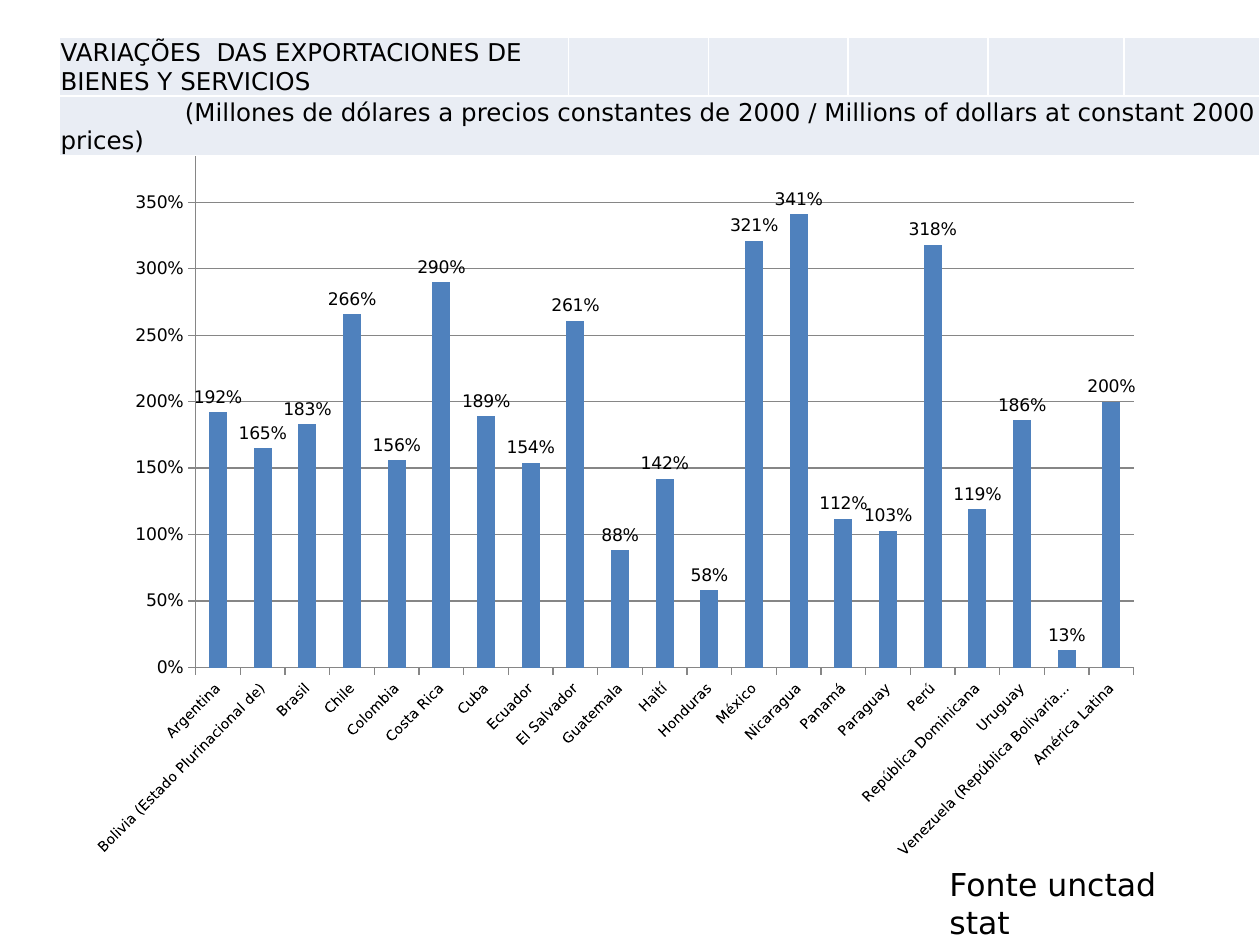
from lxml.etree import SubElement
from pptx import Presentation
from pptx.chart.data import CategoryChartData
from pptx.dml.color import RGBColor
from pptx.enum.chart import XL_CHART_TYPE, XL_LABEL_POSITION, XL_TICK_MARK
from pptx.enum.text import MSO_ANCHOR
from pptx.oxml import parse_xml
from pptx.oxml.ns import nsdecls, qn
from pptx.util import Pt

FONT = "DejaVu Sans"
BLACK = RGBColor(0x00, 0x00, 0x00)
GRAY = RGBColor(0x86, 0x86, 0x86)
BLUE = RGBColor(0x4F, 0x81, 0xBD)
PALE = RGBColor(0xE9, 0xED, 0xF4)

HEADINGS = [
    ("VARIAÇÕES  DAS EXPORTACIONES DE BIENES Y SERVICIOS", 2, 0),
    ("(Millones de dólares a precios constantes de 2000 / "
     "Millions of dollars at constant 2000 prices)", 7, 71),
]
COLUMN_WIDTHS = [226.8, 64.1, 79.9, 79.9, 79.9, 77.8, 77.8]
HEADING_HEIGHT = 34
VARIATIONS = [
    ("Argentina", 1.92),
    ("Bolivia (Estado Plurinacional de)", 1.65),
    ("Brasil", 1.83),
    ("Chile", 2.66),
    ("Colombia", 1.56),
    ("Costa Rica", 2.9),
    ("Cuba", 1.89),
    ("Ecuador", 1.54),
    ("El Salvador", 2.61),
    ("Guatemala", 0.88),
    ("Haití", 1.42),
    ("Honduras", 0.58),
    ("México", 3.21),
    ("Nicaragua", 3.41),
    ("Panamá", 1.12),
    ("Paraguay", 1.03),
    ("Perú", 3.18),
    ("República Dominicana", 1.19),
    ("Uruguay", 1.86),
    ("Venezuela (República Bolivariana de)", 0.13),
    ("América Latina", 2),
]
PLOT_LAYOUT = {"x": 0.08, "y": 0.04, "w": 0.89, "h": 0.71}
SOURCE = "Fonte unctad stat"


def style_font(font, size):
    font.name = FONT
    font.size = Pt(size)
    font.color.rgb = BLACK


def style_line(line):
    line.color.rgb = GRAY
    line.width = Pt(0.75)


def add_variation_chart(slide):
    data = CategoryChartData(number_format="0%")
    data.categories = [country for country, _ in VARIATIONS]
    data.add_series("Series 1", [value for _, value in VARIATIONS])
    chart = slide.shapes.add_chart(
        XL_CHART_TYPE.COLUMN_CLUSTERED, Pt(54), Pt(60.5), Pt(612), Pt(430.5), data
    ).chart
    chart.has_legend = False
    chart.has_title = False
    style_font(chart.font, 10)

    countries = chart.category_axis
    style_font(countries.tick_labels.font, 8.2)
    countries.format.line.color.rgb = GRAY
    countries.major_tick_mark = XL_TICK_MARK.OUTSIDE
    rotation = countries._element.find(qn("c:txPr")).find(qn("a:bodyPr"))
    rotation.set("rot", "-2700000")
    rotation.set("vert", "horz")

    percent = chart.value_axis
    percent.minimum_scale, percent.maximum_scale, percent.major_unit = 0, 4, 0.5
    percent.major_tick_mark = XL_TICK_MARK.OUTSIDE
    percent.tick_labels.number_format = "0%"
    percent.tick_labels.number_format_is_linked = False
    style_font(percent.tick_labels.font, 10)
    style_line(percent.format.line)
    percent.has_major_gridlines = True
    style_line(percent.major_gridlines.format.line)

    bars = chart.plots[0]
    bars.gap_width = 150
    bars.vary_by_categories = False
    bars.series[0].format.fill.solid()
    bars.series[0].format.fill.fore_color.rgb = BLUE
    bars.has_data_labels = True
    labels = bars.data_labels
    labels.show_value = True
    labels.number_format = "0%"
    labels.number_format_is_linked = False
    labels.position = XL_LABEL_POSITION.OUTSIDE_END
    style_font(labels.font, 10)

    plot_area = chart._chartSpace.chart.plotArea
    for old_layout in plot_area.findall(qn("c:layout")):
        plot_area.remove(old_layout)
    settings = {"layoutTarget": "inner", "xMode": "edge", "yMode": "edge", **PLOT_LAYOUT}
    entries = "".join(f'<c:{key} val="{value}"/>' for key, value in settings.items())
    plot_area.insert(0, parse_xml(
        f'<c:layout {nsdecls("c")}><c:manualLayout>{entries}</c:manualLayout></c:layout>'
    ))


def style_cell(cell):
    cell.margin_left = cell.margin_right = cell.margin_top = Pt(0.7)
    cell.margin_bottom = Pt(0)
    cell.vertical_anchor = MSO_ANCHOR.BOTTOM
    properties = cell._tc.get_or_add_tcPr()
    for side in ("lnL", "lnR", "lnT", "lnB"):
        border = SubElement(properties, qn(f"a:{side}"), w=str(Pt(1)))
        border_fill = SubElement(border, qn("a:solidFill"))
        SubElement(border_fill, qn("a:srgbClr"), val="FFFFFF")
    cell.fill.solid()
    cell.fill.fore_color.rgb = PALE


def add_heading_table(slide):
    table = slide.shapes.add_table(
        len(HEADINGS), len(COLUMN_WIDTHS), Pt(34), Pt(21),
        Pt(sum(COLUMN_WIDTHS)), Pt(HEADING_HEIGHT * len(HEADINGS)),
    ).table
    for column, width in zip(table.columns, COLUMN_WIDTHS):
        column.width = Pt(width)
    for cell in table.iter_cells():
        style_cell(cell)
    for row, (heading, span, indent) in enumerate(HEADINGS):
        table.rows[row].height = Pt(HEADING_HEIGHT)
        cell = table.cell(row, 0)
        cell.merge(table.cell(row, span - 1))
        cell.text_frame.text = heading
        paragraph = cell.text_frame.paragraphs[0]
        paragraph._p.get_or_add_pPr().set("indent", str(Pt(indent)))
        style_font(paragraph.runs[0].font, 14)


def add_source(slide):
    frame = slide.shapes.add_textbox(Pt(535.5), Pt(491), Pt(143.5), Pt(29)).text_frame
    frame.word_wrap = True
    frame.text = SOURCE
    style_font(frame.paragraphs[0].runs[0].font, 18)


def main():
    presentation = Presentation()
    presentation.slide_width, presentation.slide_height = Pt(720), Pt(540)
    slide = presentation.slides.add_slide(presentation.slide_layouts[6])
    add_variation_chart(slide)
    add_heading_table(slide)
    add_source(slide)
    presentation.save("out.pptx")


if __name__ == "__main__":
    main()
